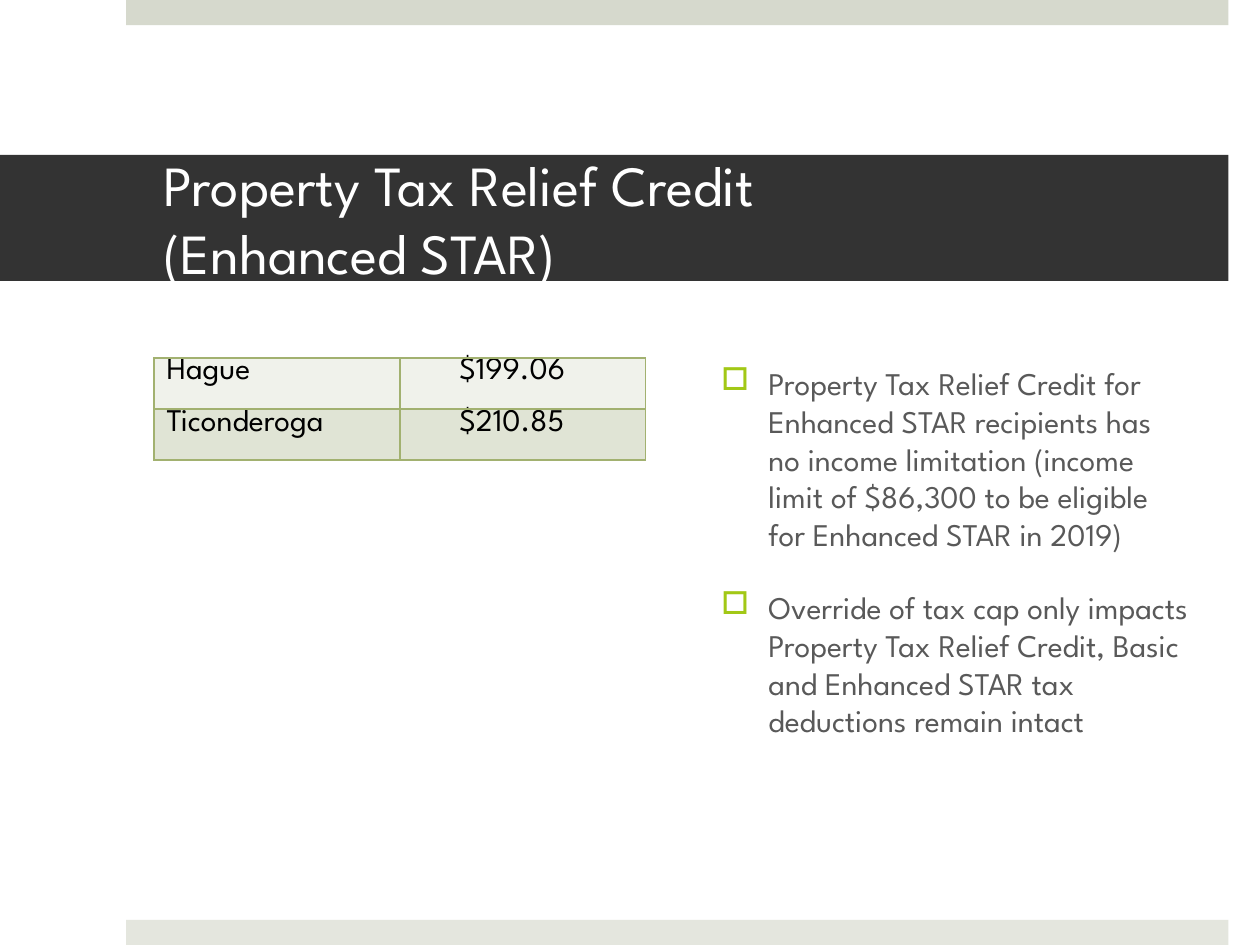
from lxml import etree
from pptx import Presentation
from pptx.dml.color import RGBColor
from pptx.enum.shapes import MSO_SHAPE
from pptx.enum.text import MSO_ANCHOR, MSO_AUTO_SIZE, PP_ALIGN
from pptx.oxml.ns import qn
from pptx.util import Pt

RECTANGLE = MSO_SHAPE.RECTANGLE
MIDDLE, TOP = MSO_ANCHOR.MIDDLE, MSO_ANCHOR.TOP
LEFT = PP_ALIGN.LEFT
NO_AUTOFIT = MSO_AUTO_SIZE.NONE

FONT = "League Spartan"
WHITE = RGBColor(0xFF, 0xFF, 0xFF)
BLACK = RGBColor(0x00, 0x00, 0x00)
CHARCOAL = RGBColor(0x33, 0x33, 0x33)
GREY = RGBColor(0x59, 0x59, 0x59)
TOP_BAR = RGBColor(0xD6, 0xD9, 0xCD)
BOTTOM_BAR = RGBColor(0xE4, 0xE6, 0xDE)
ROW_FILLS = (RGBColor(0xF0, 0xF2, 0xEB), RGBColor(0xE0, 0xE4, 0xD5))
BORDER = RGBColor(0xA2, 0xB1, 0x70)
BULLET = RGBColor(0xA2, 0xC8, 0x16)

TITLE = "Property Tax Relief Credit \v(Enhanced STAR)"
CREDITS = [("Hague", "$199.06"), ("Ticonderoga", "$210.85")]
NOTES = [
    "Property Tax Relief Credit for Enhanced STAR recipients has no income "
    "limitation (income limit of $86,300 to be eligible for Enhanced STAR in 2019)",
    "Override of tax cap only impacts Property Tax Relief Credit, Basic and "
    "Enhanced STAR tax deductions remain intact",
]


def write(para, text, size=18, color=BLACK):
    para.text = text
    para.alignment = LEFT
    for span in para.runs:
        span.font.name = FONT
        span.font.size = Pt(size)
        span.font.color.rgb = color


def add_bar(page, box, color):
    bar = page.shapes.add_shape(RECTANGLE, *map(Pt, box))
    bar.shadow.inherit = False
    bar.fill.solid()
    bar.fill.fore_color.rgb = color
    bar.line.fill.background()


def place_title(page, box):
    title = page.shapes.title
    title.left, title.top, title.width, title.height = map(Pt, box)
    title.fill.solid()
    title.fill.fore_color.rgb = CHARCOAL
    frame = title.text_frame
    frame.auto_size = NO_AUTOFIT
    frame.vertical_anchor = MIDDLE
    frame.margin_left, frame.margin_right = Pt(93.6), Pt(21.6)
    write(frame.paragraphs[0], TITLE, size=32.4, color=WHITE)


def add_solid_fill(parent, color):
    fill = etree.SubElement(parent, qn("a:solidFill"))
    etree.SubElement(fill, qn("a:srgbClr"), val=str(color))


def set_borders(cell):
    properties = cell._tc.get_or_add_tcPr()
    for index, side in enumerate(("lnL", "lnR", "lnT", "lnB")):
        line = etree.Element(qn(f"a:{side}"), w=str(Pt(1)))
        add_solid_fill(line, BORDER)
        properties.insert(index, line)


def add_credit_table(page, box):
    frame = page.shapes.add_table(len(CREDITS), len(CREDITS[0]), *map(Pt, box))
    table = frame.table
    table.first_row = table.horz_banding = False
    for row, (values, fill) in enumerate(zip(CREDITS, ROW_FILLS)):
        for column, (text, margin) in enumerate(zip(values, (7.2, 34))):
            cell = table.cell(row, column)
            cell.margin_left = Pt(margin)
            cell.margin_top = cell.margin_bottom = 0
            cell.vertical_anchor = TOP
            cell.fill.solid()
            cell.fill.fore_color.rgb = fill
            set_borders(cell)
            write(cell.text_frame.paragraphs[0], text)


def set_bullet(para, indent):
    properties = para._p.get_or_add_pPr()
    properties.set("marL", str(Pt(indent)))
    properties.set("indent", str(-Pt(indent)))
    color = etree.SubElement(properties, qn("a:buClr"))
    etree.SubElement(color, qn("a:srgbClr"), val=str(BULLET))
    etree.SubElement(properties, qn("a:buChar"), char="□")


def add_notes_list(page, box):
    frame = page.shapes.add_textbox(*map(Pt, box)).text_frame
    frame.word_wrap = True
    for index, text in enumerate(NOTES):
        para = frame.add_paragraph() if index else frame.paragraphs[0]
        write(para, text, color=GREY)
        set_bullet(para, 27)
        para.space_before = Pt(20 if index else 0)


def main():
    deck = Presentation()
    deck.slide_width, deck.slide_height = Pt(720), Pt(540)
    title_only = deck.slide_layouts[5]
    page = deck.slides.add_slide(title_only)
    add_bar(page, (72, 0, 630, 14.4), TOP_BAR)
    add_bar(page, (72, 525.6, 630, 14.4), BOTTOM_BAR)
    place_title(page, (0, 88.5, 702, 72))
    add_credit_table(page, (88, 204.5, 281, 58.4))
    add_notes_list(page, (405, 204.5, 281, 290))
    deck.save("out.pptx")


if __name__ == "__main__":
    main()
